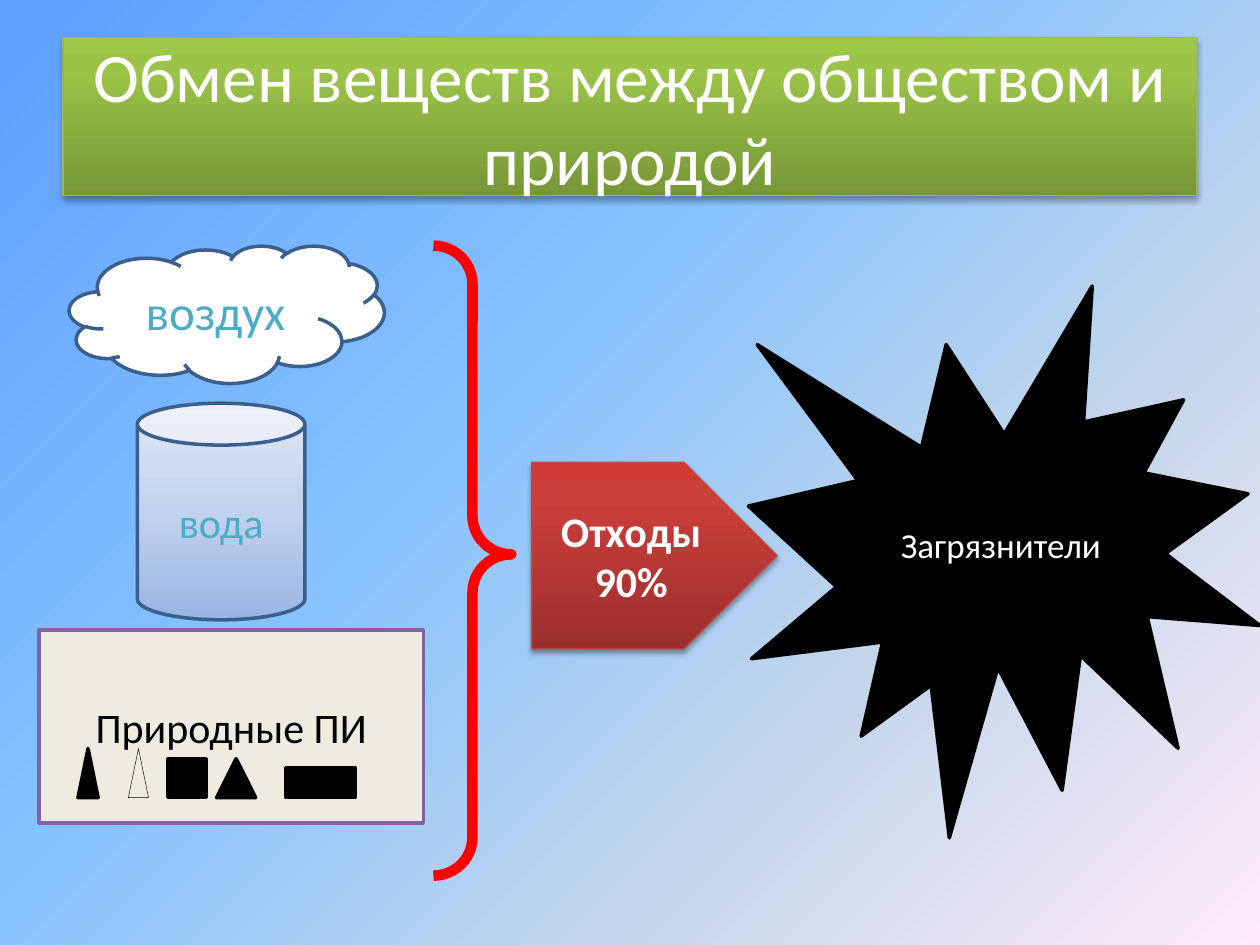
from lxml import etree
from pptx import Presentation
from pptx.dml.color import RGBColor
from pptx.enum.shapes import MSO_SHAPE
from pptx.enum.text import MSO_ANCHOR, PP_ALIGN
from pptx.oxml.ns import qn
from pptx.util import Pt

RECTANGLE = MSO_SHAPE.RECTANGLE
CLOUD = MSO_SHAPE.CLOUD
CAN = MSO_SHAPE.CAN
EXTRACT = MSO_SHAPE.FLOWCHART_EXTRACT
TRIANGLE = MSO_SHAPE.ISOSCELES_TRIANGLE
BRACE = MSO_SHAPE.RIGHT_BRACE
PENTAGON = MSO_SHAPE.PENTAGON
EXPLOSION = MSO_SHAPE.EXPLOSION1
CENTER = PP_ALIGN.CENTER
MIDDLE = MSO_ANCHOR.MIDDLE

BLACK = RGBColor(0x00, 0x00, 0x00)
WHITE = RGBColor(0xFF, 0xFF, 0xFF)
RED = RGBColor(0xFF, 0x00, 0x00)
TEAL = RGBColor(0x4B, 0xAC, 0xC6)
NAVY = RGBColor(0x3A, 0x5F, 0x8C)
PURPLE = RGBColor(0x80, 0x64, 0xA2)
CREAM = RGBColor(0xEE, 0xEC, 0xE1)
GREEN_EDGE = RGBColor(0x98, 0xB9, 0x55)
RED_EDGE = RGBColor(0xBF, 0x4C, 0x48)

SKY = (
    (0, RGBColor(0x5E, 0x9E, 0xFF)),
    (40, RGBColor(0x85, 0xC2, 0xFF)),
    (70, RGBColor(0xC4, 0xD6, 0xEB)),
    (100, RGBColor(0xFF, 0xEB, 0xFA)),
)
GREEN = (
    (0, RGBColor(0x77, 0x97, 0x37)),
    (80, RGBColor(0x9B, 0xC3, 0x48)),
    (100, RGBColor(0x9D, 0xC7, 0x46)),
)
WATER = (
    (0, RGBColor(0x9A, 0xB5, 0xE4)),
    (50, RGBColor(0xC2, 0xD1, 0xED)),
    (100, RGBColor(0xE1, 0xE8, 0xF5)),
)
CRIMSON = (
    (0, RGBColor(0x9C, 0x2F, 0x2D)),
    (80, RGBColor(0xCB, 0x3E, 0x3A)),
    (100, RGBColor(0xCE, 0x3B, 0x37)),
)


class Diagram:
    font_name = "Calibri"

    def __init__(self, slide):
        self.slide = slide

    def gradient(self, fill, owner, stops, angle):
        fill.gradient()
        grad = owner.xpath(".//a:gradFill")[0]
        stop_list = grad.find(qn("a:gsLst"))
        for old in list(stop_list):
            stop_list.remove(old)
        for position, color in stops:
            stop = etree.SubElement(stop_list, qn("a:gs"), pos=str(position * 1000))
            etree.SubElement(stop, qn("a:srgbClr"), val=str(color))
        grad.find(qn("a:lin")).set("ang", str(angle * 60000))

    def background(self, stops):
        self.gradient(self.slide.background.fill, self.slide.element, stops, 45)

    def shape(self, kind, left, top, width, height, fill, edge, weight=2):
        shape = self.slide.shapes.add_shape(
            kind, Pt(left), Pt(top), Pt(width), Pt(height))
        shape.shadow.inherit = False
        if fill is None:
            shape.fill.background()
        elif isinstance(fill, RGBColor):
            shape.fill.solid()
            shape.fill.fore_color.rgb = fill
        else:
            self.gradient(shape.fill, shape.element, fill, 270)
        shape.line.color.rgb = edge
        shape.line.width = Pt(weight)
        return shape

    def shadow(self, shape):
        effects = shape.element.spPr.find(qn("a:effectLst"))
        outer = etree.SubElement(
            effects, qn("a:outerShdw"), blurRad=str(Pt(3.1)), dist=str(Pt(1.8)),
            dir="5400000", rotWithShape="0")
        color = etree.SubElement(outer, qn("a:srgbClr"), val=str(BLACK))
        etree.SubElement(color, qn("a:alpha"), val="35000")

    def label(self, shape, lines, size, color, bold=False):
        frame = shape.text_frame
        for name, value in {"word_wrap": True, "vertical_anchor": MIDDLE}.items():
            setattr(frame, name, value)
        frame.text = lines
        style = {"name": self.font_name, "size": Pt(size), "bold": bold}
        for paragraph in frame.paragraphs:
            paragraph.alignment = CENTER
            font = paragraph.runs[0].font
            for name, value in style.items():
                setattr(font, name, value)
            font.color.rgb = color


def main():
    deck = Presentation()
    deck.slide_width, deck.slide_height = Pt(720), Pt(540)
    diagram = Diagram(deck.slides.add_slide(deck.slide_layouts[6]))
    diagram.background(SKY)

    title = diagram.shape(RECTANGLE, 36, 21.6, 648, 90, GREEN, GREEN_EDGE, 0.75)
    diagram.shadow(title)
    diagram.label(title, "Обмен веществ между обществом и природой", 39.6, WHITE)

    air = diagram.shape(CLOUD, 39.6, 140.4, 180, 78.5, WHITE, NAVY)
    diagram.label(air, "воздух", 28, TEAL)
    water = diagram.shape(CAN, 78.5, 230.4, 95.8, 123.8, WATER, NAVY)
    diagram.label(water, "вода", 24, TEAL)
    resources = diagram.shape(RECTANGLE, 22.3, 360, 219.6, 110.2, CREAM, PURPLE)
    diagram.label(resources, "Природные ПИ", 24, BLACK)

    ground = 455.8
    for kind, left, width, height, fill, weight in (
        (EXTRACT, 44.6, 11.5, 28.1, BLACK, 2),
        (TRIANGLE, 73.4, 11.5, 28.1, None, 0.25),
        (RECTANGLE, 95.8, 22.3, 22.3, BLACK, 2),
        (EXTRACT, 123.8, 22.3, 22.3, BLACK, 2),
        (RECTANGLE, 163.4, 39.6, 17, BLACK, 2),
    ):
        diagram.shape(kind, left, ground - height, width, height, fill, BLACK, weight)

    brace = diagram.shape(BRACE, 247.7, 140.4, 44.6, 360, None, RED, 6)
    brace.adjustments[0] = 0.49
    brace.adjustments[1] = 0.49

    waste = diagram.shape(
        PENTAGON, 303.8, 264.2, 140.4, 106.6, CRIMSON, RED_EDGE, 0.75)
    diagram.shadow(waste)
    diagram.label(waste, "Отходы\n90%", 24, WHITE, bold=True)

    pollutants = diagram.shape(EXPLOSION, 427.7, 163.4, 292.3, 315.4, BLACK, BLACK)
    diagram.label(pollutants, "Загрязнители", 20, WHITE)

    deck.save("out.pptx")


if __name__ == "__main__":
    main()
